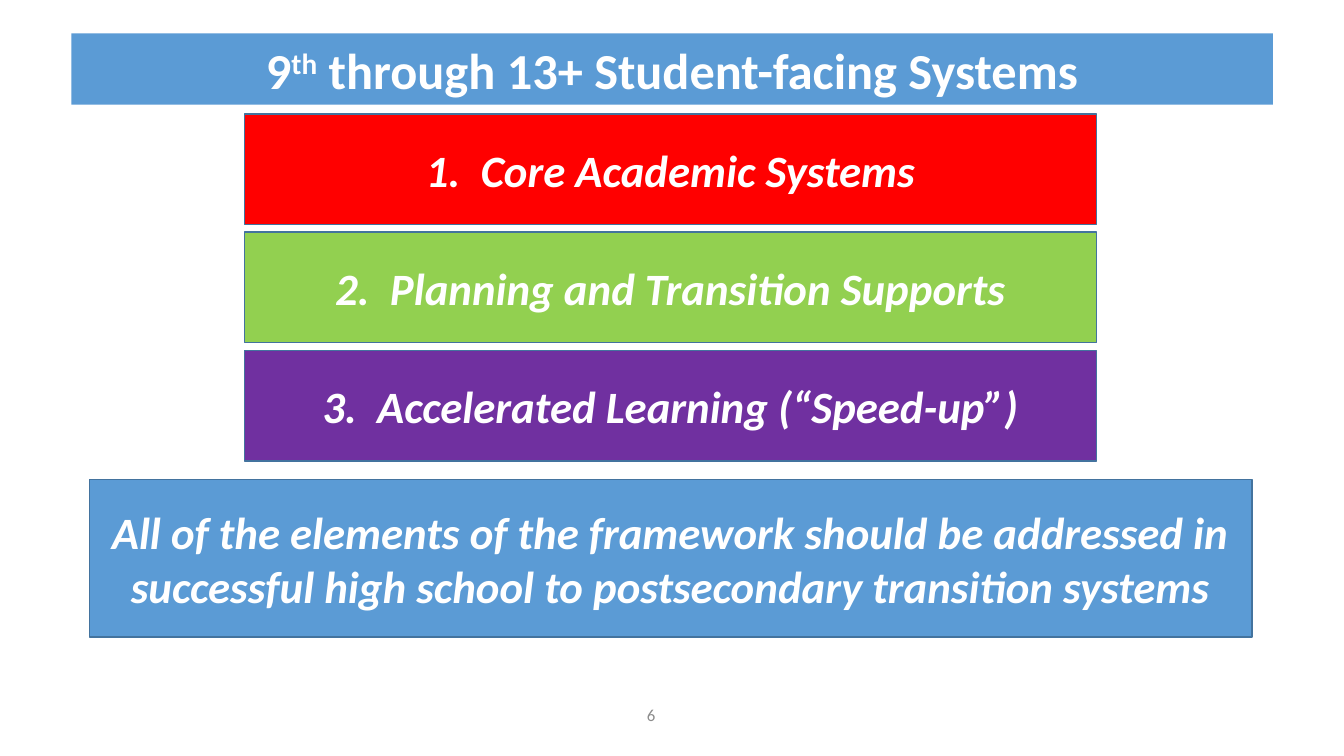
from dataclasses import dataclass

from pptx import Presentation
from pptx.dml.color import RGBColor
from pptx.enum.shapes import MSO_SHAPE
from pptx.enum.text import MSO_ANCHOR, MSO_AUTO_SIZE, PP_ALIGN
from pptx.util import Cm, Pt

RECT = MSO_SHAPE.RECTANGLE
MIDDLE = MSO_ANCHOR.MIDDLE
CENTER = PP_ALIGN.CENTER
NO_FIT = MSO_AUTO_SIZE.NONE

TITLE = [("9", {}), ("th", {"baseline": "30000"}),
         (" through 13+ Student-facing Systems", {})]
SYSTEMS = [
    ("Core Academic Systems", "FF0000"),
    ("Planning and Transition Supports", "92D050"),
    ("Accelerated Learning (“Speed-up”)", "7030A0"),
]
SUMMARY = ("All of the elements of the framework should be addressed in "
           "successful high school to postsecondary transition systems")
PAGE = "6"

TITLE_BOX = (1.8, 0.84, 30.28, 1.8)
SUMMARY_BOX = (2.26, 12.09, 29.29, 3.96)
PAGE_BOX = (12.6, 17.5, 7.62, 1.02)
BAR_LEFT, BAR_TOP, BAR_W, BAR_H, BAR_PITCH = 6.17, 2.87, 21.46, 2.79, 2.98


@dataclass(frozen=True)
class Theme:
    font: str = "Calibri"
    blue: str = "5B9BD5"
    outline: str = "43739E"
    light: str = "FFFFFF"
    muted: str = "8C8C8C"
    title_size: int = 36
    body_size: int = 32
    page_size: int = 12


THEME = Theme()


def write(sp, runs, size, color, bold=True, italic=False):
    tf = sp.text_frame
    tf.word_wrap = True
    tf.auto_size = NO_FIT
    tf.vertical_anchor = MIDDLE
    p = tf.paragraphs[0]
    p.alignment = CENTER
    for text, attrs in runs:
        r = p.add_run()
        r.text = text
        r.font.name = THEME.font
        r.font.size = Pt(size)
        r.font.bold = bold
        r.font.italic = italic
        r.font.color.rgb = RGBColor.from_string(color)
        for name, value in attrs.items():
            r._r.get_or_add_rPr().set(name, value)


def fill(sp, color):
    sp.fill.solid()
    sp.fill.fore_color.rgb = RGBColor.from_string(color)


def add_bar(s, box, color, runs):
    sp = s.shapes.add_shape(RECT, *map(Cm, box))
    sp.shadow.inherit = False
    fill(sp, color)
    sp.line.color.rgb = RGBColor.from_string(THEME.outline)
    sp.line.width = Pt(1)
    write(sp, runs, THEME.body_size, THEME.light, italic=True)


def main():
    prs = Presentation()
    prs.slide_width, prs.slide_height = Cm(33.87), Cm(19.05)
    s = prs.slides.add_slide(prs.slide_layouts[5])

    title = s.shapes.title
    title.left, title.top, title.width, title.height = map(Cm, TITLE_BOX)
    fill(title, THEME.blue)
    write(title, TITLE, THEME.title_size, THEME.light)

    for i, (name, color) in enumerate(SYSTEMS):
        box = (BAR_LEFT, BAR_TOP + i * BAR_PITCH, BAR_W, BAR_H)
        runs = [(f"{i + 1}.", {}), (" ", {"spc": "720"}), (name, {})]
        add_bar(s, box, color, runs)
    add_bar(s, SUMMARY_BOX, THEME.blue, [(SUMMARY, {})])

    page = s.shapes.add_textbox(*map(Cm, PAGE_BOX))
    write(page, [(PAGE, {})], THEME.page_size, THEME.muted, bold=False)

    prs.save("out.pptx")


if __name__ == "__main__":
    main()
